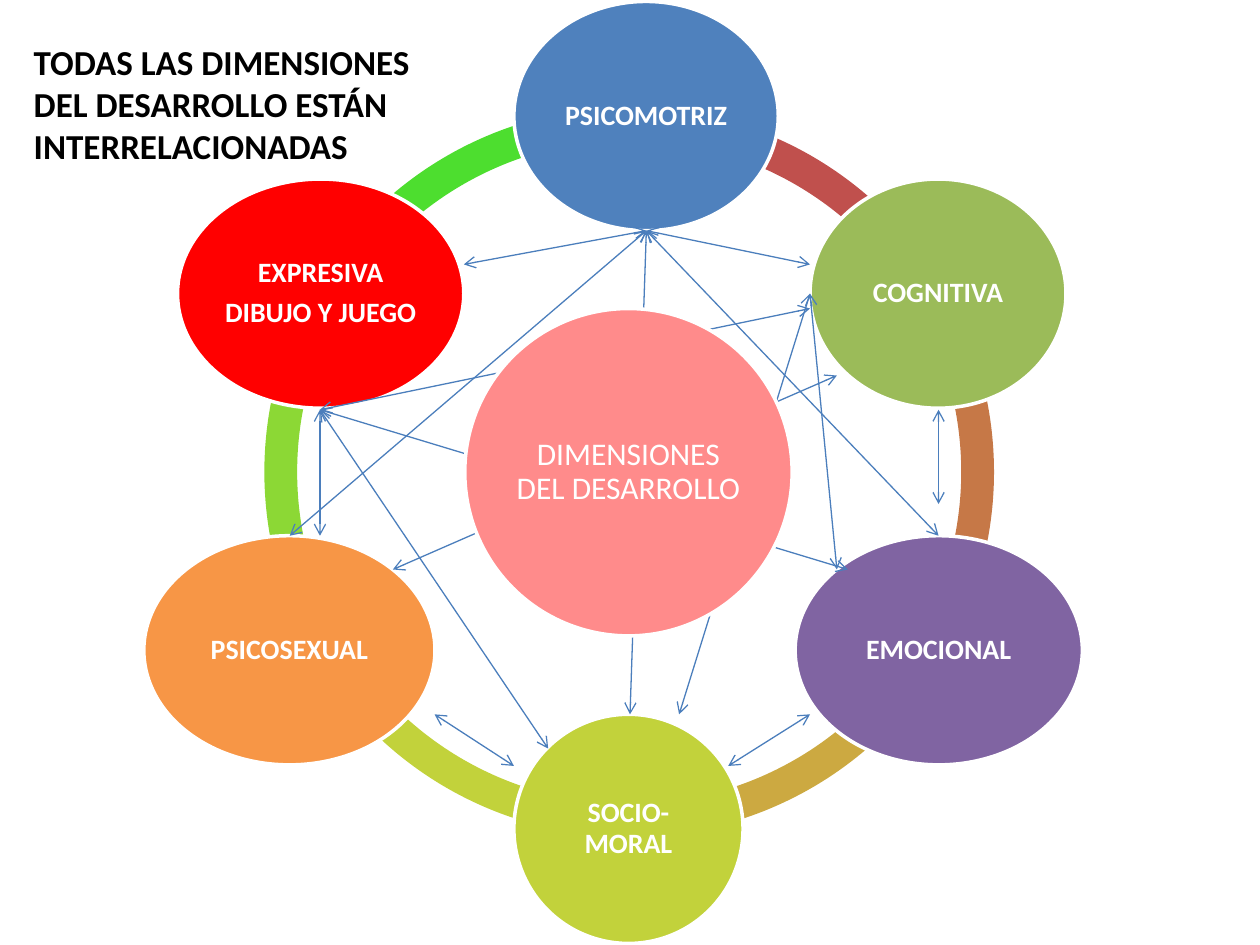
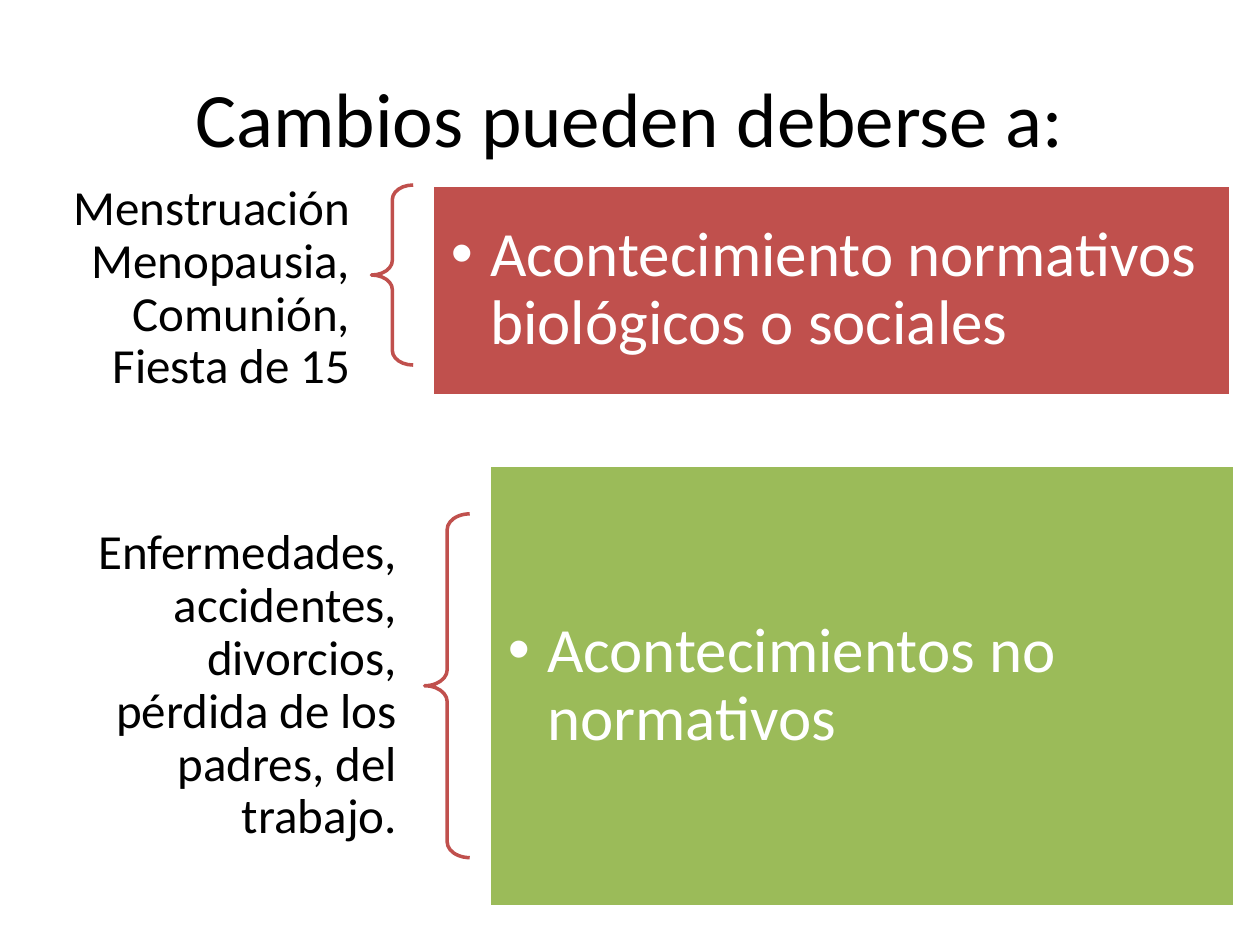
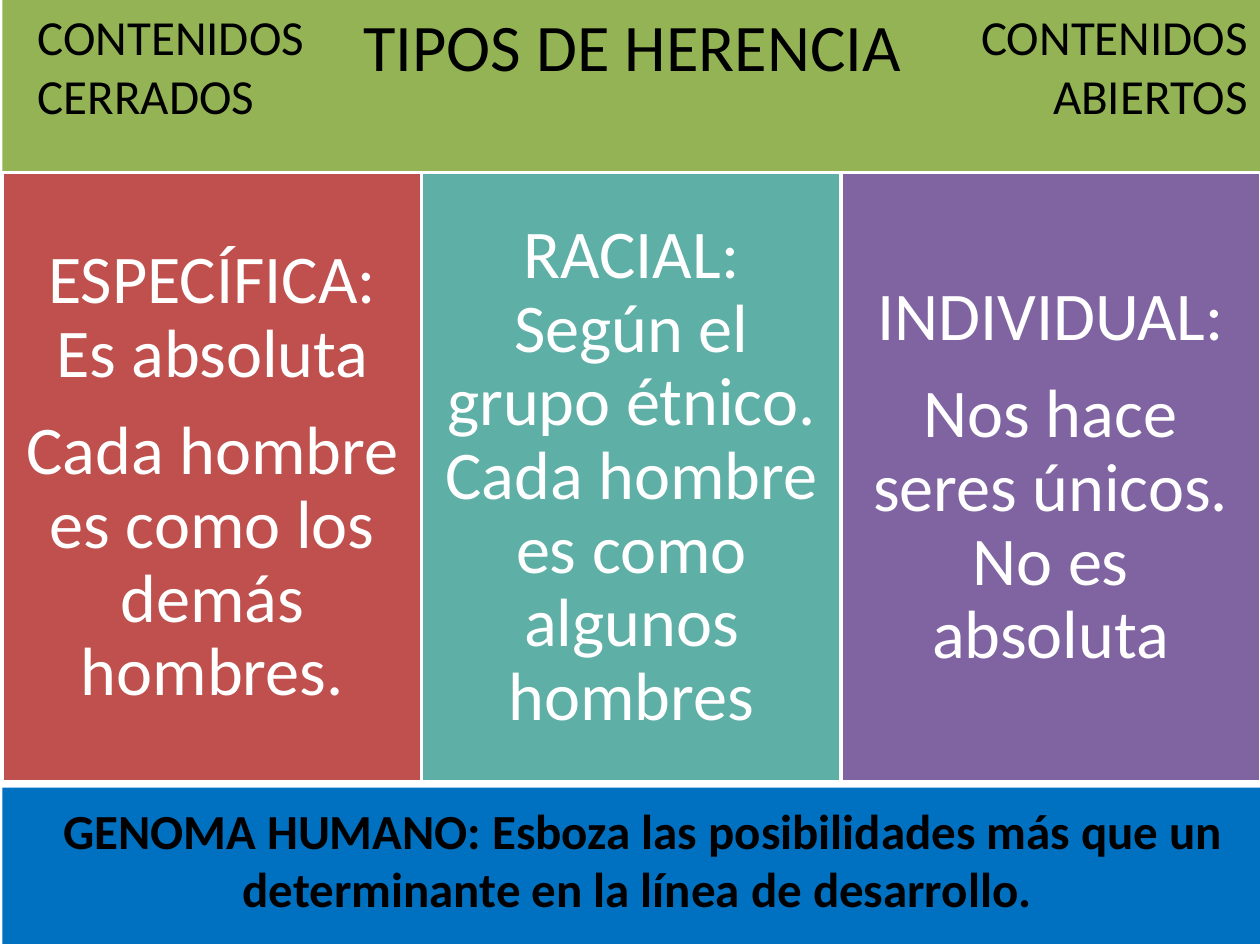
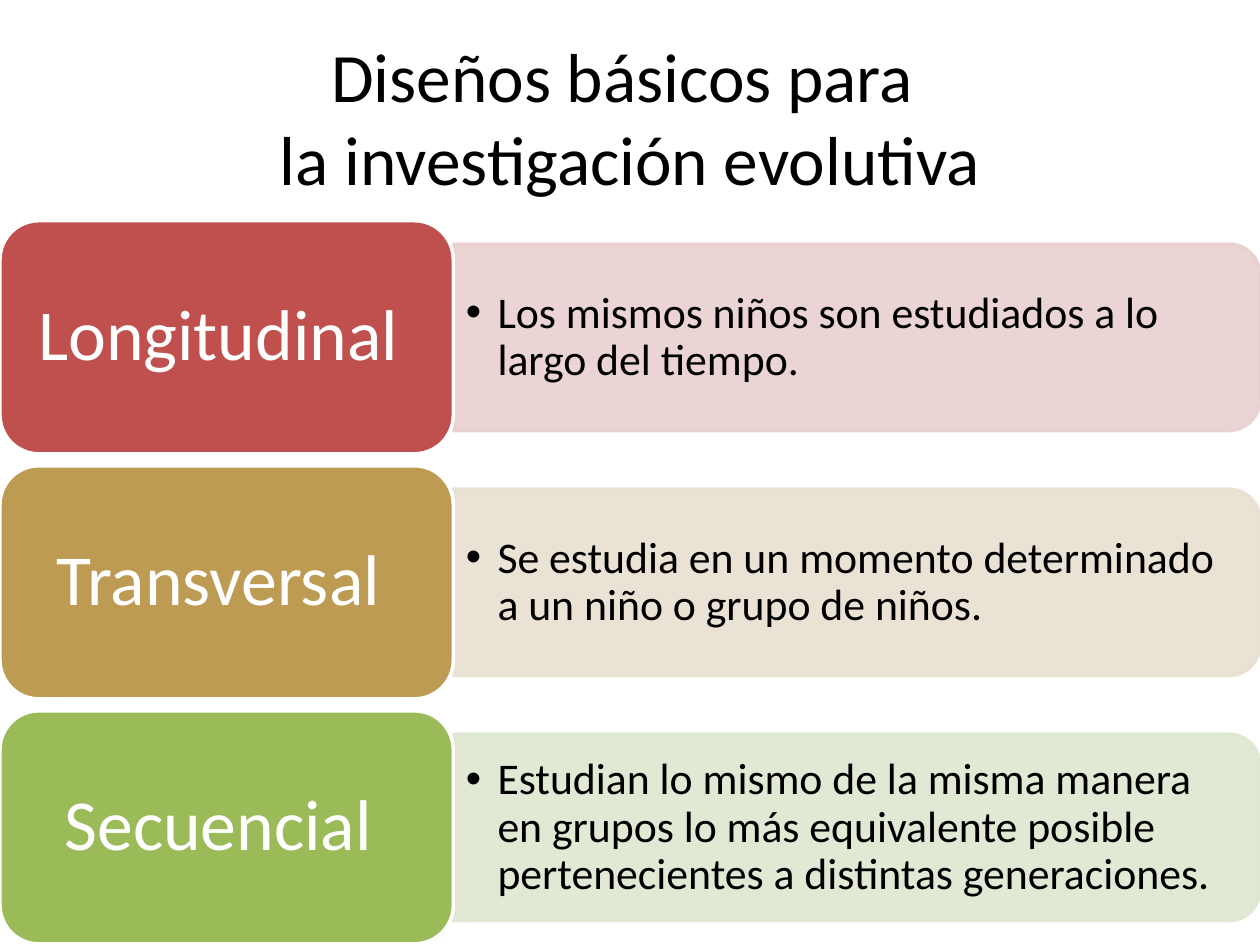
from lxml.etree import SubElement
from pptx import Presentation
from pptx.dml.color import RGBColor
from pptx.enum.shapes import MSO_CONNECTOR, MSO_SHAPE
from pptx.enum.text import MSO_ANCHOR, PP_ALIGN
from pptx.oxml.ns import qn
from pptx.util import Cm, Pt

FONT = "Calibri"
WHITE, BLACK = "FFFFFF", "000000"
RED, GREEN, PURPLE, LIME = "C0504D", "9BBB59", "8064A2", "C2D23B"
ARROW = "4B7EBC"
LEFT, CENTER, RIGHT = PP_ALIGN.LEFT, PP_ALIGN.CENTER, PP_ALIGN.RIGHT
SIMPLE_INSET = (0.25, 0.13)


def block(slide, preset, at, fill=None, outline=None):
    """Add a preset shape, or a text box when there is no preset; lengths in cm."""
    place = [Cm(length) for length in at]
    if preset is None:
        return slide.shapes.add_textbox(*place)
    shape = slide.shapes.add_shape(preset, *place)
    shape.shadow.inherit = False
    for part, colour in ((shape.fill, fill), (shape.line.fill, outline)):
        if colour:
            part.solid()
            part.fore_color.rgb = RGBColor.from_string(colour)
        else:
            part.background()
    if outline:
        shape.line.width = Pt(2)
    return shape


def write(shape, text, size, colour=WHITE, align=CENTER, bold=False,
          inset=SIMPLE_INSET, anchor=MSO_ANCHOR.MIDDLE, tight=0.35, indent=0):
    """Fill a shape with text; tight is the gap after a paragraph in lines."""
    frame = shape.text_frame
    frame.text = text
    frame.word_wrap = True
    frame.vertical_anchor = anchor
    frame.margin_left = frame.margin_right = Cm(inset[0])
    frame.margin_top = frame.margin_bottom = Cm(inset[1])
    for paragraph in frame.paragraphs:
        paragraph.alignment = align
        if tight:
            paragraph.line_spacing = 0.9
            paragraph.space_after = Pt(round(size * tight, 1))
        if indent:
            properties = paragraph._p.get_or_add_pPr()
            properties.set("marL", str(Cm(indent)))
            properties.set("indent", str(-Cm(indent)))
            SubElement(properties, qn("a:buFont"), typeface="Arial")
            SubElement(properties, qn("a:buChar"), char="•")
        for run in paragraph.runs:
            run.font.name = FONT
            run.font.size = Pt(size)
            run.font.bold = bold
            run.font.color.rgb = RGBColor.from_string(colour)


deck = Presentation()
deck.slide_width, deck.slide_height = Cm(25.4), Cm(19.05)

# Slides and their titles
TITLE_AT = (1.27, 0.76, 22.86, 3.18)
TOP, MIDDLE = MSO_ANCHOR.TOP, MSO_ANCHOR.MIDDLE
titles = [
    ("TODAS LAS DIMENSIONES\nDEL DESARROLLO ESTÁN\nINTERRELACIONADAS",
     (0.43, 0.69, 8.97, 2.82), 20, PP_ALIGN.JUSTIFY, True, TOP, SIMPLE_INSET),
    ("Cambios pueden deberse a:", TITLE_AT, 44, CENTER, False, MIDDLE, SIMPLE_INSET),
    ("TIPOS DE HERENCIA", (0.05, -0.46, 25.4, 3.99), 38, CENTER, False, TOP, (0.4, 0.56)),
    ("Diseños básicos para \vla investigación evolutiva",
     TITLE_AT, 39.6, CENTER, False, MIDDLE, SIMPLE_INSET),
]
slides = []
for text, at, size, align, bold, anchor, inset in titles:
    slide = deck.slides.add_slide(deck.slide_layouts[5])
    title = slide.shapes.title
    title.left, title.top, title.width, title.height = [Cm(length) for length in at]
    write(title, text, size, BLACK, align, bold, inset, anchor, tight=0)
    slides.append(slide)
dimensions, changes, heredity, designs = slides

# Slide 1: ring of six arcs, counted back from the top
ring_colours = ["4DDE2F", "8CD835", LIME, "CCA941", "C67847", RED]
for step, colour in enumerate(ring_colours):
    start = (210 - 60 * step) % 360
    arc = block(dimensions, MSO_SHAPE.BLOCK_ARC, (5.33, 2.16, 14.71, 14.71), colour)
    # Angles are stored in 1/60000 degree, adjustments in 1/100000
    arc.adjustments[0] = start * 0.6
    arc.adjustments[1] = (start + 60) % 360 * 0.6
    arc.adjustments[2] = 0.045

# Slide 1: one oval per dimension
NODE_HEIGHT = 4.62
nodes = [
    ("PSICOMOTRIZ", 10.36, 0.03, 5.33, "4F81BD"),
    ("COGNITIVA", 16.33, 3.61, 5.16, GREEN),
    ("EMOCIONAL", 16.03, 10.8, 5.79, PURPLE),
    ("SOCIO-MORAL", 10.36, 14.4, 4.62, LIME),
    ("PSICOSEXUAL", 2.9, 10.8, 5.87, "F79646"),
    ("EXPRESIVA\nDIBUJO Y JUEGO", 3.58, 3.61, 5.77, "FF0000"),
]
for name, left, top, width, colour in nodes:
    node = block(dimensions, MSO_SHAPE.OVAL, (left, top, width, NODE_HEIGHT), colour, WHITE)
    write(node, name, 16, bold=True, inset=(0.05, 0.05))

# Slide 1: two-headed arrows between dimensions
psychomotor, expressive, cognitive = (13.03, 4.65), (6.45, 8.26), (16.33, 5.92)
links = [
    (psychomotor, (12.7, 14.4)),
    (psychomotor, (18.92, 10.8)),
    (psychomotor, (16.33, 5.33)),
    (psychomotor, (9.35, 5.33)),
    (psychomotor, (5.84, 10.8)),
    (expressive, (6.45, 10.8)),
    (expressive, (11.05, 15.09)),
    (expressive, (17.09, 11.48)),
    (expressive, (16.33, 6.22)),
    (cognitive, (16.87, 11.48)),
    (cognitive, (13.69, 14.4)),
    ((14.68, 15.44), (16.33, 14.4)),
    ((8.76, 14.4), (10.36, 15.44)),
    ((18.92, 10.16), (18.92, 8.26)),
    ((7.92, 11.48), (16.87, 7.57)),
]
for begin, end in links:
    link = dimensions.shapes.add_connector(
        MSO_CONNECTOR.STRAIGHT, *[Cm(length) for length in begin + end])
    link.line.width = Pt(0.75)
    link.line.color.rgb = RGBColor.from_string(ARROW)
    for tip in ("a:headEnd", "a:tailEnd"):
        SubElement(link.line._get_or_add_ln(), qn(tip), type="arrow")
    SubElement(link._element.spPr, qn("a:effectLst"))

hub = block(dimensions, MSO_SHAPE.OVAL, (9.37, 6.22, 6.6, 6.6), "FF8B8B", WHITE)
write(hub, "DIMENSIONES DEL DESARROLLO", 18, inset=(0.05, 0.05))

# Slide 2: examples, brace and kind of event
events = [
    ("Menstruación\vMenopausia, Comunión, Fiesta de 15", (0.89, 3.33, 6.73, 4.98),
     (7.49, 3.73, 0.84, 3.63),
     "Acontecimiento normativos biológicos o sociales", (8.71, 3.73, 16.1, 4.24), RED),
    ("Enfermedades, accidentes, divorcios, pérdida de los padres, del trabajo.",
     (0.89, 10.36, 7.67, 6.93), (8.56, 10.36, 0.91, 6.93),
     "Acontecimientos no normativos", (9.86, 9.37, 15.04, 8.92), GREEN),
]
for examples, examples_at, brace_at, event, event_at, colour in events:
    write(block(changes, None, examples_at), examples, 28, BLACK, RIGHT, inset=(0.56, 0.2))
    brace = block(changes, MSO_SHAPE.LEFT_BRACE, brace_at, outline=RED)
    brace.adjustments[0], brace.adjustments[1] = 0.35, 0.5
    panel = block(changes, MSO_SHAPE.RECTANGLE, event_at, colour, WHITE)
    write(panel, event, 36, align=LEFT, inset=(0.38, 0.38), tight=0.15, indent=0.79)

# Slide 3: title band, three columns, genome band
heredity.shapes.title.fill.solid()
heredity.shapes.title.fill.fore_color.rgb = RGBColor.from_string("94B355")
kinds = [
    ("ESPECÍFICA: Es absoluta\nCada hombre es como los demás hombres.", RED),
    ("RACIAL: Según el grupo étnico. Cada hombre es como algunos hombres", "5EAFA6"),
    ("INDIVIDUAL:\nNos hace seres únicos. No es absoluta", PURPLE),
]
for index, (kind, colour) in enumerate(kinds):
    column = block(heredity, MSO_SHAPE.RECTANGLE,
                   (0.05 + 8.45 * index, 3.48, 8.46, 12.29), colour, WHITE)
    write(column, kind, 39, inset=(0.4, 0.4))
block(heredity, MSO_SHAPE.RECTANGLE, (0.05, 15.88, 25.4, 3.15), "0070C0")
captions = [
    ("GENOMA HUMANO: Esboza las posibilidades más que un determinante "
     "en la línea de desarrollo. ", (0.51, 16, 24.89, 2.64), CENTER, True),
    ("CONTENIDOS ABIERTOS", (17.6, 0, 7.8, 2.64), RIGHT, False),
    ("CONTENIDOS CERRADOS", (0.51, 0, 7.8, 2.64), LEFT, False),
]
for caption, at, align, bold in captions:
    write(block(heredity, None, at), caption, 28, BLACK, align, bold, anchor=TOP, tight=0)

# Slide 4: a card and a description per research design
CARD_WIDTH, CARD_HEIGHT = 9.14, 4.7
PANEL_LENGTH, PANEL_HEIGHT = 16.26, 3.76
research = [
    ("Longitudinal ", RED, "E8D0D0",
     "Los mismos niños son estudiados a lo largo del tiempo."),
    ("Transversal ", "BD9B53", "E8E1D1",
     "Se estudia en un momento determinado a un niño o grupo de niños."),
    ("Secuencial ", GREEN, "DEE7D1",
     "Estudian lo mismo de la misma manera en grupos lo más equivalente posible "
     "pertenecientes a distintas generaciones."),
]
for index, (name, colour, tint, description) in enumerate(research):
    top = 4.45 + 4.94 * index
    # The panel is an upright shape turned by a quarter
    panel = block(designs, MSO_SHAPE.ROUND_2_SAME_RECTANGLE,
                  (CARD_WIDTH + (PANEL_LENGTH - PANEL_HEIGHT) / 2,
                   top + (CARD_HEIGHT - PANEL_LENGTH) / 2, PANEL_HEIGHT, PANEL_LENGTH),
                  tint, tint)
    panel.rotation = 90
    for paint in panel._element.spPr.iter(qn("a:srgbClr")):
        SubElement(paint, qn("a:alpha"), val="90000")
    write(block(designs, None, (CARD_WIDTH, top + 0.66, 16.08, 3.4)), description, 25,
          BLACK, LEFT, tight=0.15, indent=0.64)
    card = block(designs, MSO_SHAPE.ROUNDED_RECTANGLE,
                 (0, top, CARD_WIDTH, CARD_HEIGHT), colour, WHITE)
    write(card, name, 41, inset=(0.43, 0.23))

deck.save("out.pptx")
